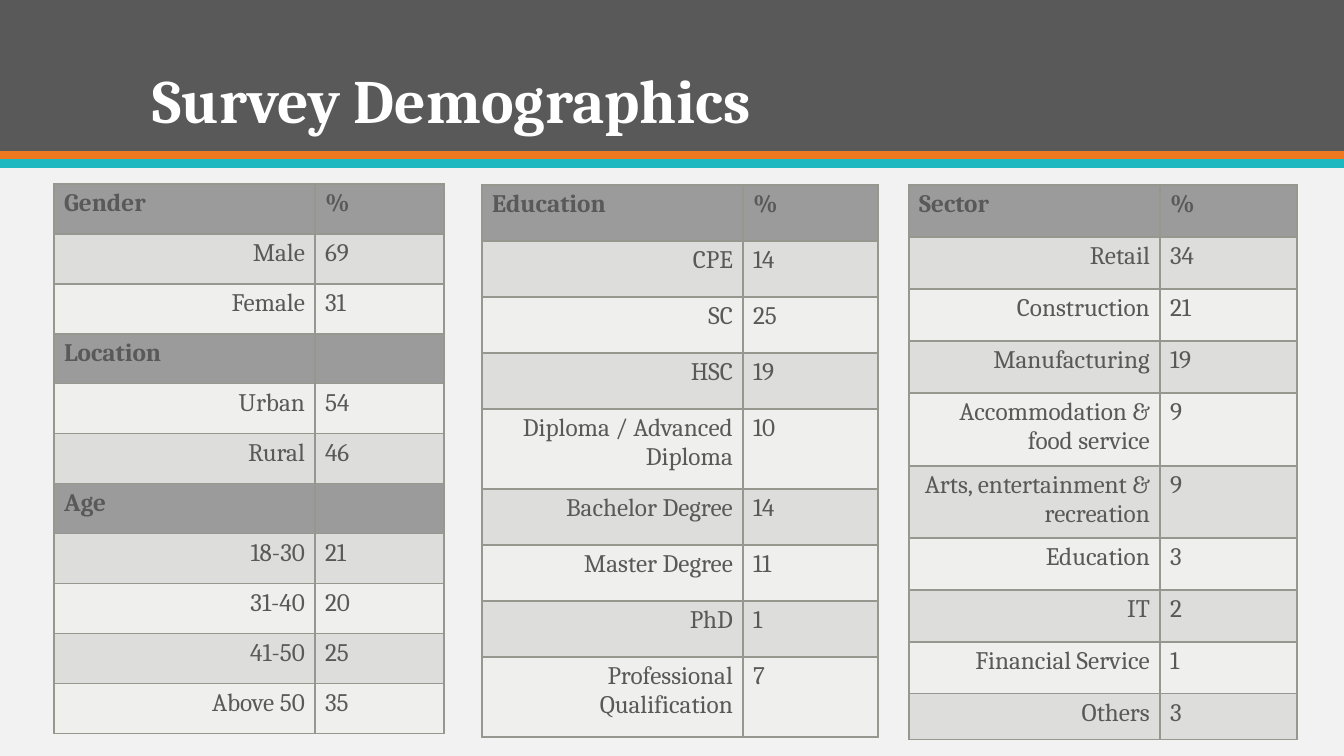
"""Build the survey demographics slide with three tables."""
from lxml.etree import SubElement as Sub
from pptx import Presentation
from pptx.dml.color import RGBColor
from pptx.enum.shapes import MSO_SHAPE as Shape
from pptx.enum.text import MSO_ANCHOR as Anchor, PP_ALIGN as Align
from pptx.oxml.ns import qn
from pptx.util import Pt

PX = 12192000 / 1344


def paint(fill, color):
    fill.solid()
    fill.fore_color.rgb = RGBColor.from_string(color)


def write(frame, text, size=18, color="595959", bold=False, align=Align.LEFT, space=1.0):
    frame.word_wrap = True
    para = frame.paragraphs[0]
    para.alignment = align
    para.line_spacing = space
    run = para.add_run()
    run.text = text
    run.font.name = "Cambria"
    run.font.size = Pt(size)
    run.font.bold = bold
    paint(run.font.fill, color)


deck = Presentation()
deck.slide_width, deck.slide_height = int(1344 * PX), int(756 * PX)
slide = deck.slides.add_slide(deck.slide_layouts[6])
paint(slide.background.fill, "F2F2F2")

for top, high, color in [(0, 151, "595959"), (151, 9, "EF7920"), (159, 9, "1EB8C1")]:
    band = slide.shapes.add_shape(Shape.RECTANGLE, 0, int(top * PX), int(1344 * PX), int(high * PX))
    band.shadow.inherit = False
    band.line.fill.background()
    paint(band.fill, color)

title = slide.shapes.add_textbox(*[int(n * PX) for n in (143, 28, 1058, 114)]).text_frame
title.vertical_anchor = Anchor.BOTTOM
write(title, "Survey Demographics", size=44, color="FFFFFF", bold=True, space=0.9)

people = [
    ("Gender", "%"), ("Male", "69"), ("Female", "31"),
    ("Location", ""), ("Urban", "54"), ("Rural", "46"),
    ("Age", ""), ("18-30", "21"), ("31-40", "20"), ("41-50", "25"), ("Above 50", "35"),
]
school = [
    ("Education", "%"), ("CPE", "14"), ("SC", "25"), ("HSC", "19"),
    ("Diploma / Advanced Diploma", "10"), ("Bachelor Degree", "14"),
    ("Master Degree", "11"), ("PhD", "1"), ("Professional Qualification", "7"),
]
sector = [
    ("Sector", "%"), ("Retail", "34"), ("Construction", "21"), ("Manufacturing", "19"),
    ("Accommodation & food service", "9"), ("Arts, entertainment & recreation", "9"),
    ("Education", "3"), ("IT", "2"), ("Financial Service", "1"), ("Others", "3"),
]
tables = [
    (54, 184, (261, 129), [50] * 11, people),
    (482, 185, (261, 135), [56] * 4 + [80] + [56] * 3 + [80], school),
    (909, 185, (251, 137), [52] * 4 + [73, 72] + [52] * 3 + [46], sector),
]

for left, top, wide, highs, rows in tables:
    box = [int(n * PX) for n in (left, top, sum(wide), sum(highs))]
    table = slide.shapes.add_table(len(rows), 2, *box).table
    table.first_row = table.horz_banding = False
    for col, width in zip(table.columns, wide):
        col.width = int(width * PX)
    for i, (row, high) in enumerate(zip(rows, highs)):
        table.rows[i].height = int(high * PX)
        head = i == 0 or not row[1]
        shade = "9B9B9B" if head else ("EFEFEE", "DDDDDB")[i % 2]
        for j, text in enumerate(row):
            cell = table.cell(i, j)
            props = cell._tc.get_or_add_tcPr()
            for side in ("lnL", "lnR", "lnT", "lnB"):
                line = Sub(props, qn("a:" + side), w=str(Pt(1)))
                Sub(Sub(line, qn("a:solidFill")), qn("a:srgbClr"), val="969890")
            paint(cell.fill, shade)
            if text:
                side = Align.LEFT if head or j else Align.RIGHT
                write(cell.text_frame, text, bold=head, align=side)

deck.save("out.pptx")
